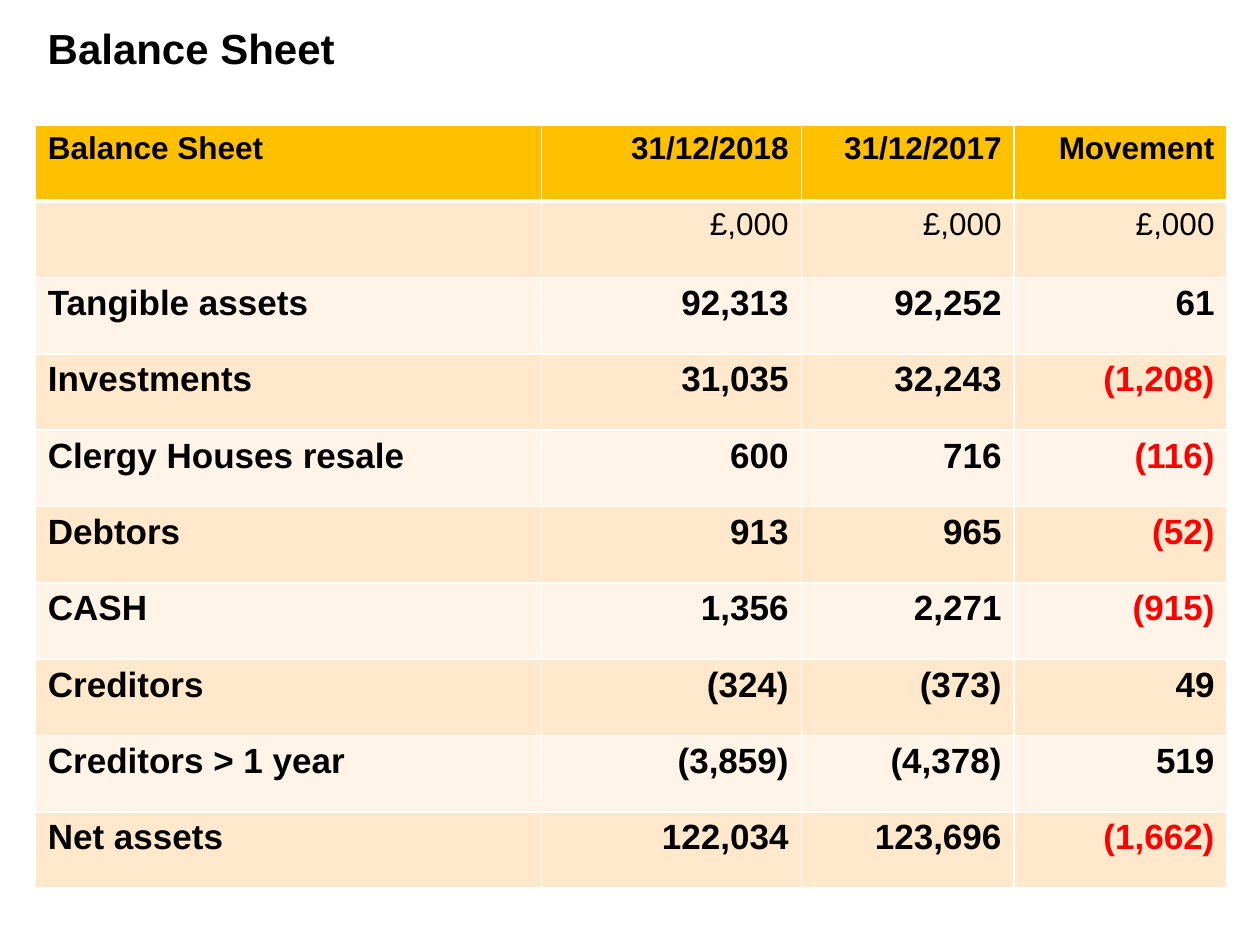
import pptx
import pptx.dml.color
import pptx.enum.text
import pptx.oxml.ns
import pptx.util
from lxml import etree

Inches = pptx.util.Inches
Pt = pptx.util.Pt
RGBColor = pptx.dml.color.RGBColor
ALIGN = pptx.enum.text.PP_ALIGN

FONT = "Arial"
BLACK = RGBColor(0x00, 0x00, 0x00)
RED = RGBColor(0xFF, 0x00, 0x00)
WHITE = RGBColor(0xFF, 0xFF, 0xFF)
HEADER_FILL = RGBColor(0xFF, 0xC0, 0x00)
BAND_FILLS = (RGBColor(0xFF, 0xF4, 0xE7), RGBColor(0xFF, 0xE8, 0xCC))

COLUMN_WIDTHS = (4.02, 2.06, 1.69, 1.69)
TABLE_HEIGHT = 6.06
ROWS = (
    ("Balance Sheet", " 31/12/2018", "31/12/2017", "Movement"),
    ("", "£,000", "£,000", "£,000"),
    ("Tangible assets", "92,313", "92,252", "61"),
    ("Investments", "31,035", "32,243", "(1,208)"),
    ("Clergy Houses resale", "600", "716", "(116)"),
    ("Debtors", "913", "965", "(52)"),
    ("CASH", "1,356", "2,271", "(915)"),
    ("Creditors", "(324)", "(373)", "49"),
    ("Creditors > 1 year", "(3,859)", "(4,378)", "519"),
    ("Net assets", "122,034", "123,696", "(1,662)"),
)


def add_run(paragraph, text, size, bold=True, color=BLACK):
    run = paragraph.add_run()
    run.text = text
    run.font.name = FONT
    run.font.size = Pt(size)
    run.font.bold = bold
    run.font.color.rgb = color


def add_title(slide, text):
    shape = slide.shapes.add_textbox(Inches(0.28), Inches(0.13), Inches(5.59), Inches(0.5))
    shape.text_frame.word_wrap = True
    add_run(shape.text_frame.paragraphs[0], text, 24)


def set_borders(cell, top=1, bottom=1):
    properties = cell._tc.get_or_add_tcPr()
    widths = {"a:lnL": 1, "a:lnR": 1, "a:lnT": top, "a:lnB": bottom}
    # Border lines must come before the cell fill
    for position, (tag, width) in enumerate(widths.items()):
        line = etree.Element(pptx.oxml.ns.qn(tag), w=str(Pt(width)))
        fill = etree.SubElement(line, pptx.oxml.ns.qn("a:solidFill"))
        etree.SubElement(fill, pptx.oxml.ns.qn("a:srgbClr"), val=str(WHITE))
        properties.insert(position, line)


def fill_cell(cell, text, row, column):
    cell.fill.solid()
    cell.fill.fore_color.rgb = HEADER_FILL if row == 0 else BAND_FILLS[row % 2]
    # A heavier rule separates the header from the body
    set_borders(cell, top=3 if row == 1 else 1, bottom=3 if row == 0 else 1)

    paragraph = cell.text_frame.paragraphs[0]
    paragraph.alignment = ALIGN.LEFT if column == 0 else ALIGN.RIGHT
    if text:
        # Negative movements are red
        negative = column == len(COLUMN_WIDTHS) - 1 and text.startswith("(")
        add_run(paragraph, text, 18 if row < 2 else 20, bold=row != 1,
                color=RED if negative else BLACK)


def add_balance_table(slide):
    table = slide.shapes.add_table(
        len(ROWS), len(COLUMN_WIDTHS), Inches(0.28), Inches(0.99),
        Inches(sum(COLUMN_WIDTHS)), Inches(TABLE_HEIGHT)).table
    for column, width in zip(table.columns, COLUMN_WIDTHS):
        column.width = Inches(width)
    for row, texts in enumerate(ROWS):
        table.rows[row].height = Inches(TABLE_HEIGHT / len(ROWS))
        for column, text in enumerate(texts):
            fill_cell(table.cell(row, column), text, row, column)


def main():
    presentation = pptx.Presentation()
    presentation.slide_width = Inches(10)
    presentation.slide_height = Inches(7.5)
    slide = presentation.slides.add_slide(presentation.slide_layouts[6])

    add_balance_table(slide)
    add_title(slide, "Balance Sheet")
    presentation.save("out.pptx")


if __name__ == "__main__":
    main()
